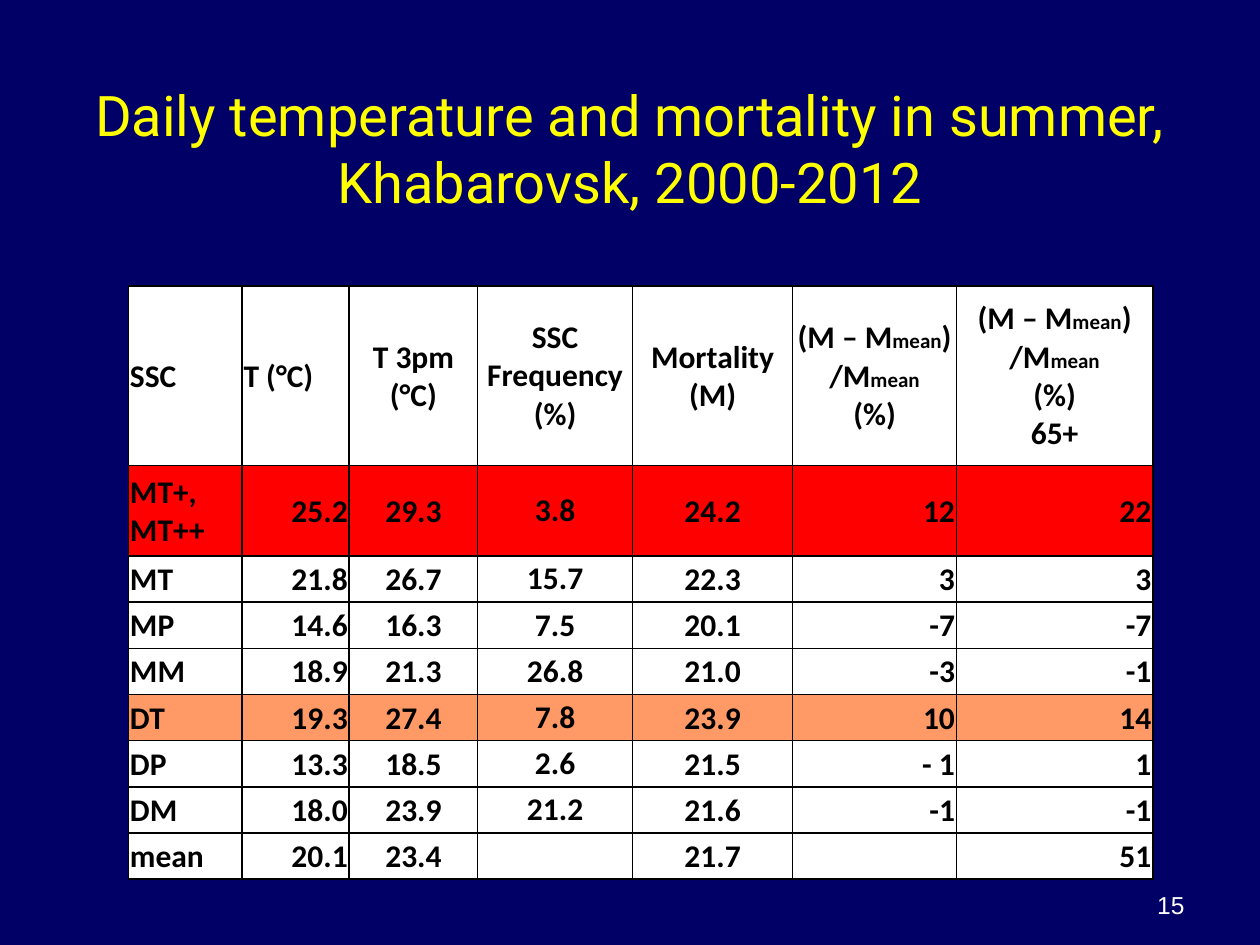
"""Build the slide on daily temperature and mortality in Khabarovsk."""
import pptx
import pptx.dml.color
import pptx.enum.text
import pptx.oxml
import pptx.oxml.ns
import pptx.util

Cm = pptx.util.Cm
Pt = pptx.util.Pt
ALIGN = pptx.enum.text.PP_ALIGN
ANCHOR = pptx.enum.text.MSO_ANCHOR

HEADERS = [
    "SSC", "T (°C)", "T 3pm (°C)", "SSC Frequency (%)", "Mortality (M)",
    "(M – M|mean|)\n/M|mean|\n(%)",
    "(M – M|mean|)\n/M|mean|\n(%)\n65+",
]
RECORDS = [
    ["MT+, MT++", "25.2", "29.3", "3.8", "24.2", "12", "22"],
    ["MT", "21.8", "26.7", "15.7", "22.3", "3", "3"],
    ["MP", "14.6", "16.3", "7.5", "20.1", "-7", "-7"],
    ["MM", "18.9", "21.3", "26.8", "21.0", "-3", "-1"],
    ["DT", "19.3", "27.4", "7.8", "23.9", "10", "14"],
    ["DP", "13.3", "18.5", "2.6", "21.5", "- 1", "1"],
    ["DM", "18.0", "23.9", "21.2", "21.6", "-1", "-1"],
    ["mean", "20.1", "23.4", "", "21.7", "", "51"],
]
COLUMN_WIDTHS = [2.29, 2.16, 2.59, 3.12, 3.23, 3.3, 3.96]
ROW_HEIGHTS = [3.61, 1.83] + [0.93] * 7
ROW_FILLS = {"MT+, MT++": "FF0000", "DT": "FF9966"}
FREQUENCY_COLUMN = 3
HEADER_ALIGNS = [ALIGN.LEFT] * 2 + [ALIGN.CENTER] * 5
RECORD_ALIGNS = [ALIGN.LEFT, ALIGN.RIGHT] + [ALIGN.CENTER] * 3 + [ALIGN.RIGHT] * 2


def color(code):
    """Return the RGB colour for a hex string."""
    return pptx.dml.color.RGBColor.from_string(code)


def apply(target, formats):
    """Set each attribute of target from a dict of format values."""
    for attribute, value in formats.items():
        setattr(target, attribute, value)


def format_font(font, code, **formats):
    """Give a font its colour and other format values."""
    apply(font, formats)
    font.color.rgb = color(code)


def paint(fill, code):
    """Make a fill solid in the given colour."""
    fill.solid()
    fill.fore_color.rgb = color(code)


def add_borders(cell):
    """Draw a thin black line on the four sides of a cell."""
    properties = cell._tc.get_or_add_tcPr()
    for position, side in enumerate(("lnL", "lnR", "lnT", "lnB")):
        properties.insert(position, pptx.oxml.parse_xml(
            f'<a:{side} {pptx.oxml.ns.nsdecls("a")} w="{Pt(1)}"><a:solidFill>'
            f'<a:srgbClr val="000000"/></a:solidFill></a:{side}>'))


def write_cell(cell, content, alignment, fill_code, inset):
    """Fill one cell, with the parts between bars set small."""
    apply(cell, {
        "vertical_anchor": ANCHOR.MIDDLE, "margin_left": inset,
        "margin_right": inset, "margin_top": inset, "margin_bottom": 0,
    })
    paint(cell.fill, fill_code)
    add_borders(cell)
    for number, line in enumerate(content.split("\n")):
        frame = cell.text_frame
        paragraph = frame.add_paragraph() if number else frame.paragraphs[0]
        paragraph.alignment = alignment
        for order, part in enumerate(line.split("|")):
            if part:
                run = paragraph.add_run()
                run.text = part
                format_font(run.font, "000000", name="Calibri", bold=True,
                            size=Pt(12 if order % 2 else 18))


def add_mortality_table(slide):
    """Add the table of temperature and mortality by weather type."""
    rows = [HEADERS] + RECORDS
    table = slide.shapes.add_table(
        len(rows), len(HEADERS), Cm(2.59), Cm(5.77),
        Cm(sum(COLUMN_WIDTHS)), Cm(sum(ROW_HEIGHTS))).table
    for column, width in zip(table.columns, COLUMN_WIDTHS):
        column.width = Cm(width)
    for row, height in zip(table.rows, ROW_HEIGHTS):
        row.height = Cm(height)
    for row_index, contents in enumerate(rows):
        aligns = RECORD_ALIGNS if row_index else HEADER_ALIGNS
        fill_code = ROW_FILLS.get(contents[0], "FFFFFF")
        for column_index, content in enumerate(contents):
            inset = Cm(0 if column_index == FREQUENCY_COLUMN else 0.03)
            write_cell(table.cell(row_index, column_index), content,
                       aligns[column_index], fill_code, inset)


def add_title(slide, wording):
    """Place and format the title."""
    title = slide.shapes.title
    apply(title, {"left": Cm(1.27), "top": Cm(1.07),
                  "width": Cm(22.86), "height": Cm(3.81)})
    write_frame(title.text_frame, wording, ANCHOR.MIDDLE, ALIGN.CENTER,
                "FFFF00", name="Roboto", size=Pt(32))


def add_page_number(slide, number):
    """Write the page number at the lower right."""
    page_number = slide.shapes.add_textbox(Cm(18.21), Cm(17.35), Cm(5.92), Cm(1.32))
    write_frame(page_number.text_frame, number, ANCHOR.BOTTOM, ALIGN.RIGHT,
                "FFFFFF", name="Arial", size=Pt(14))


def write_frame(frame, wording, anchor, alignment, code, **formats):
    """Write one formatted paragraph into a text frame."""
    apply(frame, {"text": wording, "word_wrap": True, "vertical_anchor": anchor,
                  "auto_size": pptx.enum.text.MSO_AUTO_SIZE.NONE})
    paragraph = frame.paragraphs[0]
    paragraph.alignment = alignment
    format_font(paragraph.runs[0].font, code, **formats)


def main():
    """Build and save the slide."""
    presentation = pptx.Presentation()
    apply(presentation, {"slide_width": Cm(25.4), "slide_height": Cm(19.05)})
    slide = presentation.slides.add_slide(presentation.slide_layouts[5])
    paint(slide.background.fill, "000066")
    add_title(slide, "Daily temperature and mortality in summer, Khabarovsk, 2000-2012")
    add_mortality_table(slide)
    add_page_number(slide, "15")
    presentation.save("out.pptx")


if __name__ == "__main__":
    main()
